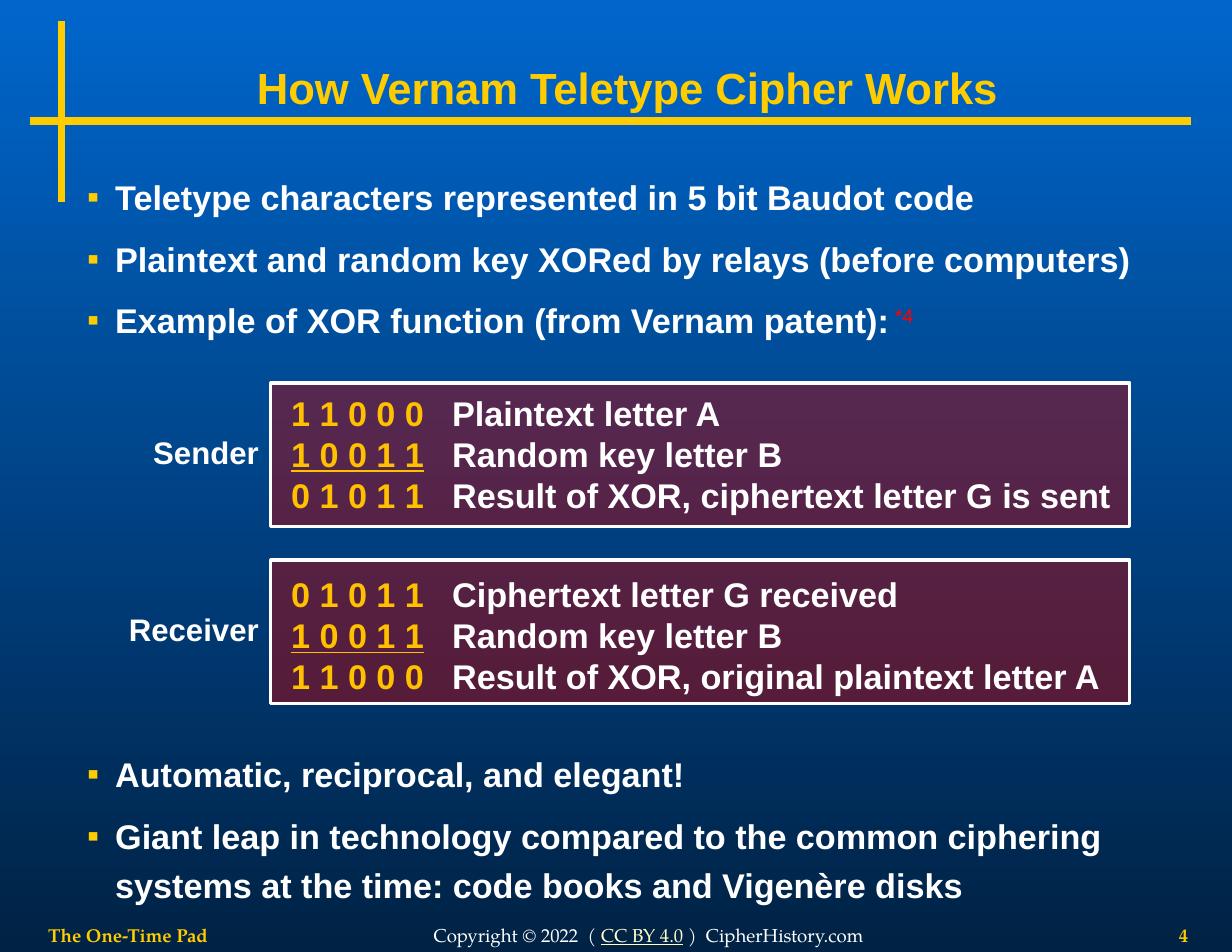
"""Build the slide on how the Vernam teletype cipher works."""
from lxml.etree import SubElement
from pptx import Presentation
from pptx.dml.color import RGBColor
from pptx.enum.shapes import MSO_CONNECTOR as CONNECTOR, MSO_SHAPE as SHAPE
from pptx.enum.text import MSO_ANCHOR as ANCHOR, PP_ALIGN as ALIGN
from pptx.oxml.ns import qn
from pptx.util import Pt

GOLD = RGBColor(0xFF, 0xCC, 0x00)
AMBER = RGBColor(0xFF, 0xC0, 0x00)
WHITE = RGBColor(0xFF, 0xFF, 0xFF)
CREAM = RGBColor(0xFF, 0xFF, 0xCC)
RED = RGBColor(0xFF, 0x00, 0x00)
CRIMSON = RGBColor(0xC0, 0x00, 0x00)
SKY = RGBColor(0x00, 0x66, 0xCC)
NAVY = RGBColor(0x00, 0x22, 0x44)
SANS, SERIF = "Arial", "TeX Gyre Pagella"

TITLE = "How Vernam Teletype Cipher Works"
NOTE_MARK = "*4"
BULLET_GROUPS = [
    (103.7, 142, [
        "Teletype characters represented in 5 bit Baudot code",
        "Plaintext and random key XORed by relays (before computers)",
        "Example of XOR function (from Vernam patent):",
    ]),
    (474.6, 125, [
        "Automatic, reciprocal, and elegant!",
        "Giant leap in technology compared to the common ciphering "
        "systems at the time: code books and Vigenère disks",
    ]),
]
PANELS = [
    ("Sender", 246.2, 6, [
        ("1 1 0 0 0", "Plaintext letter A"),
        ("1 0 0 1 1", "Random key letter B"),
        ("0 1 0 1 1", "Result of XOR, ciphertext letter G is sent"),
    ]),
    ("Receiver", 360, 8.7, [
        ("0 1 0 1 1", "Ciphertext letter G received"),
        ("1 0 0 1 1", "Random key letter B"),
        ("1 1 0 0 0", "Result of XOR, original plaintext letter A"),
    ]),
]
KEY_ROW = 1
PANEL_LEFT, PANEL_WIDTH, PANEL_HEIGHT = 174.2, 552.2, 92.2
RULES = [(19.4, 77.8, 765.4, 77.8), (39.6, 129.6, 39.6, 13.7)]
FOOTERS = [
    (31, 119, ALIGN.LEFT, True, [("The One-Time Pad", GOLD)]),
    (270, 293.8, ALIGN.CENTER, False, [
        ("Copyright © 2022  ( ", WHITE),
        ("CC BY 4.0", CREAM),
        (" )  CipherHistory.com", WHITE),
    ]),
    (702, 61.9, ALIGN.RIGHT, True, [("4", GOLD)]),
]


def add_span(para, text, size, color, bold=True, font=SANS, underline=False):
    span = para.add_run()
    span.text = text
    span.font.name, span.font.size = font, Pt(size)
    span.font.bold, span.font.underline = bold, underline
    span.font.color.rgb = color
    return span


def add_box(page, left, top, width, height, margins=(0, 0), anchor=ANCHOR.TOP):
    box = page.shapes.add_textbox(Pt(left), Pt(top), Pt(width), Pt(height))
    frame = box.text_frame
    frame.word_wrap, frame.vertical_anchor = True, anchor
    frame.margin_left = frame.margin_right = Pt(margins[0])
    frame.margin_top = frame.margin_bottom = Pt(margins[1])
    return frame


def next_para(frame, index):
    return frame.add_paragraph() if index else frame.paragraphs[0]


def add_bullet(para):
    props = para._p.get_or_add_pPr()
    props.set("marL", str(Pt(18)))
    props.set("indent", str(-Pt(18)))
    color = SubElement(props, qn("a:buClr"))
    SubElement(color, qn("a:srgbClr"), val=str(GOLD))
    SubElement(props, qn("a:buFont"), typeface=SANS)
    SubElement(props, qn("a:buChar"), char="▪")


def add_bullets(page, top, height, items):
    frame = add_box(page, 48.2, top, 734.4, height, (7.9, 4.3))
    for index, item in enumerate(items):
        para = next_para(frame, index)
        add_bullet(para)
        para.line_spacing = 1.2
        para.space_before = Pt(8 if index else 0)
        add_span(para, item, 22, WHITE)
    return frame


def add_panel(page, label, top, inset, rows):
    panel = page.shapes.add_shape(
        SHAPE.RECTANGLE, Pt(PANEL_LEFT), Pt(top), Pt(PANEL_WIDTH), Pt(PANEL_HEIGHT))
    panel.shadow.inherit = False
    panel.fill.solid()
    panel.fill.fore_color.rgb = CRIMSON
    tint = panel._element.spPr.find(qn("a:solidFill"))[0]
    SubElement(tint, qn("a:alpha"), val="45000")
    panel.line.color.rgb, panel.line.width = WHITE, Pt(2)
    frame = panel.text_frame
    frame.vertical_anchor = ANCHOR.TOP
    frame.margin_left, frame.margin_right = Pt(13), 0
    frame.margin_top, frame.margin_bottom = Pt(inset), 0
    for index, (bits, meaning) in enumerate(rows):
        para = next_para(frame, index)
        para.alignment = ALIGN.LEFT
        tabs = SubElement(para._p.get_or_add_pPr(), qn("a:tabLst"))
        SubElement(tabs, qn("a:tab"), pos=str(Pt(103.5)), algn="l")
        add_span(para, bits, 22, AMBER, underline=index == KEY_ROW)
        add_span(para, "\t" + meaning, 22, WHITE)
    side = add_box(page, PANEL_LEFT - 100.7, top + (PANEL_HEIGHT - 31.7) / 2 - 1.5,
                   100, 31.7, (7.2, 3.6), ANCHOR.MIDDLE)
    side.paragraphs[0].alignment = ALIGN.RIGHT
    add_span(side.paragraphs[0], label, 20, WHITE)


def add_rule(page, ends):
    rule = page.shapes.add_connector(CONNECTOR.STRAIGHT, *map(Pt, ends))
    rule.line.color.rgb, rule.line.width = GOLD, Pt(5)
    SubElement(rule._element.spPr, qn("a:effectLst"))


def add_title(page):
    title = page.shapes.title
    title.left, title.top, title.width, title.height = map(Pt, (39.6, 34.6, 727.2, 43.2))
    title.text_frame.vertical_anchor = ANCHOR.MIDDLE
    para = title.text_frame.paragraphs[0]
    para.alignment = ALIGN.CENTER
    add_span(para, TITLE, 28, GOLD)


def main():
    deck = Presentation()
    deck.slide_width, deck.slide_height = Pt(792), Pt(612)
    page = deck.slides.add_slide(deck.slide_layouts[5])
    fill = page.background.fill
    fill.gradient()
    fill.gradient_angle = 270
    for stop, color in zip(fill.gradient_stops, (SKY, NAVY)):
        stop.color.rgb = color

    for ends in RULES:
        add_rule(page, ends)
    add_title(page)
    frames = [add_bullets(page, *group) for group in BULLET_GROUPS]
    example = frames[0].paragraphs[-1]
    add_span(example, " ", 12, WHITE)
    mark = add_span(example, NOTE_MARK, 22, RED, bold=False)
    mark._r.get_or_add_rPr().set("baseline", "30000")
    for panel in PANELS:
        add_panel(page, *panel)
    for left, width, align, bold, spans in FOOTERS:
        frame = add_box(page, left, 591.8, width, 18, anchor=ANCHOR.MIDDLE)
        para = frame.paragraphs[0]
        para.alignment = align
        for text, color in spans:
            add_span(para, text, 12, color, bold, SERIF, color == CREAM)
    deck.save("out.pptx")


if __name__ == "__main__":
    main()
